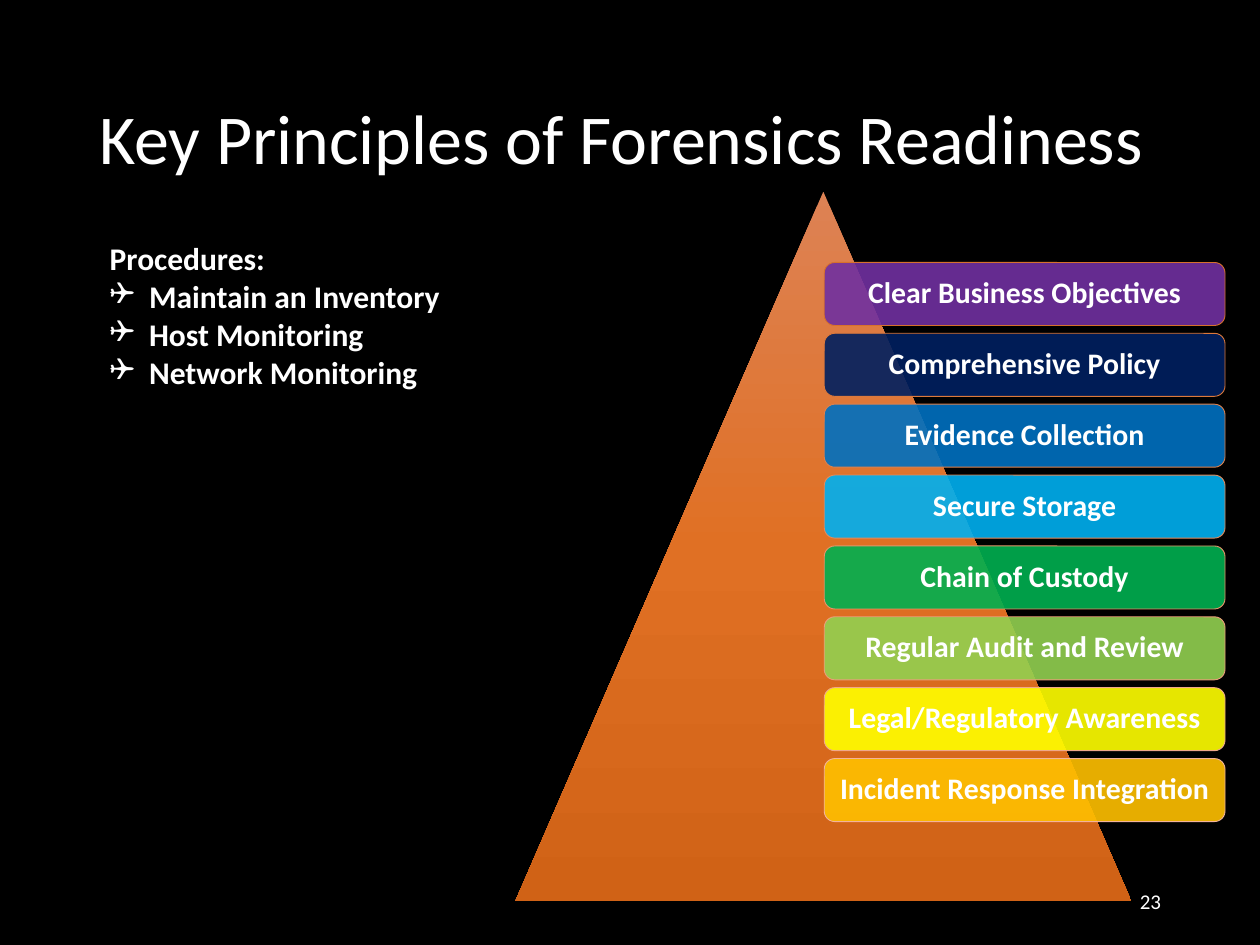
"""Build the slide on key principles of forensics readiness."""
from copy import deepcopy
from dataclasses import dataclass

from lxml import etree
from pptx import Presentation
from pptx import util as u
from pptx.dml.color import RGBColor
from pptx.enum import shapes, text
from pptx.oxml.ns import qn

COLOURS = {
    "black": "000000", "white": "FFFFFF",
    "peak": "DD8254", "middle": "E07024", "base": "D06216",
    "purple": "7030A0", "navy": "002060", "blue": "0070C0", "sky": "00B0F0",
    "green": "00B050", "lime": "92D050", "yellow": "FFFF00", "amber": "FFC000",
    "edge1": "D7712C", "edge2": "DC793B", "edge3": "E0814B", "edge4": "E58A5A",
    "edge5": "E9936A", "edge6": "EC9D7A", "edge7": "F0A88A", "edge8": "F3B39B",
}
FONT = "Calibri"
BAR_LEFT, BAR_TOP, BAR_PITCH = 471, 150, 40.5
BAR_WIDTH, BAR_HEIGHT = 229, 36


@dataclass(frozen=True)
class Principle:
    """A labelled bar with its fill and edge colour names."""
    label: str
    fill: str
    edge: str


PRINCIPLES = [
    Principle("Clear Business Objectives", "purple", "edge1"),
    Principle("Comprehensive Policy", "navy", "edge2"),
    Principle("Evidence Collection", "blue", "edge3"),
    Principle("Secure Storage", "sky", "edge4"),
    Principle("Chain of Custody", "green", "edge5"),
    Principle("Regular Audit and Review", "lime", "edge6"),
    Principle("Legal/Regulatory Awareness", "yellow", "edge7"),
    Principle("Incident Response Integration", "amber", "edge8"),
]
PROCEDURES = ["Maintain an Inventory", "Host Monitoring", "Network Monitoring"]


def colour(name: str) -> RGBColor:
    """Return the named colour."""
    return RGBColor.from_string(COLOURS[name])


def place(box, left: float, top: float, width: float, height: float) -> None:
    """Move and size a shape in points."""
    box.left, box.top = u.Pt(left), u.Pt(top)
    box.width, box.height = u.Pt(width), u.Pt(height)


def write(para, words: str, size: float, bold: bool = False) -> None:
    """Add one white run to a paragraph."""
    span = para.add_run()
    span.text = words
    span.font.name, span.font.size, span.font.bold = FONT, u.Pt(size), bold
    span.font.color.rgb = colour("white")


def set_bullet(para, mark: str = "", indent: float = 0) -> None:
    """Give a paragraph a hanging bullet, or none when the mark is empty."""
    properties = para._p.get_or_add_pPr()
    properties.set("marL", str(u.Pt(indent)))
    properties.set("indent", str(-u.Pt(indent)))
    if mark:
        etree.SubElement(properties, qn("a:buFont"), typeface="Wingdings")
        etree.SubElement(properties, qn("a:buChar"), char=mark)
    else:
        etree.SubElement(properties, qn("a:buNone"))


def draw_title(box) -> None:
    """Fill the title placeholder."""
    place(box, 49.5, 29, 621, 104)
    frame = box.text_frame
    frame.auto_size = text.MSO_AUTO_SIZE.NONE
    frame.vertical_anchor = text.MSO_ANCHOR.MIDDLE
    para = frame.paragraphs[0]
    para.alignment, para.line_spacing = text.PP_ALIGN.LEFT, 0.9
    write(para, "Key Principles of Forensics Readiness", 40)


def draw_procedures(box) -> None:
    """Fill the body placeholder with the heading and its list."""
    place(box, 55.5, 133.25, 250.5, 116.5)
    frame = box.text_frame
    frame.auto_size = text.MSO_AUTO_SIZE.NONE
    heading = frame.paragraphs[0]
    set_bullet(heading)
    write(heading, "Procedures:", 18, True)
    for procedure in PROCEDURES:
        para = frame.add_paragraph()
        set_bullet(para, "❑", 22.5)
        write(para, procedure, 18, True)
    for para in frame.paragraphs:
        para.space_before = u.Pt(0)


def draw_pyramid(group) -> None:
    """Draw the triangle with its vertical three-stop gradient."""
    pyramid = group.shapes.add_shape(
        shapes.MSO_SHAPE.ISOSCELES_TRIANGLE,
        u.Pt(294.5), u.Pt(109.5), u.Pt(352), u.Pt(405.5))
    pyramid.shadow.inherit = False
    pyramid.line.fill.background()
    pyramid.fill.gradient()
    pyramid.fill.gradient_angle = 270
    stop_list = pyramid._element.spPr.find(f".//{qn('a:gsLst')}")
    stop_list.append(deepcopy(stop_list[-1]))
    names = ("peak", "middle", "base")
    for index, (stop, name) in enumerate(zip(pyramid.fill.gradient_stops, names)):
        stop.position = index / 2
        stop.color.rgb = colour(name)


def draw_bar(group, principle: Principle, row: int) -> None:
    """Draw one translucent labelled bar."""
    bar = group.shapes.add_shape(
        shapes.MSO_SHAPE.ROUNDED_RECTANGLE, u.Pt(BAR_LEFT),
        u.Pt(BAR_TOP + row * BAR_PITCH), u.Pt(BAR_WIDTH), u.Pt(BAR_HEIGHT))
    bar.shadow.inherit = False
    bar.fill.solid()
    bar.fill.fore_color.rgb = colour(principle.fill)
    tint = bar._element.spPr.find(f"{qn('a:solidFill')}/{qn('a:srgbClr')}")
    etree.SubElement(tint, qn("a:alpha"), val="90000")
    bar.line.color.rgb = colour(principle.edge)
    bar.line.width = u.Pt(0.5)
    frame = bar.text_frame
    frame.word_wrap = True
    frame.vertical_anchor = text.MSO_ANCHOR.MIDDLE
    frame.margin_left = frame.margin_right = u.Pt(6)
    para = frame.paragraphs[0]
    para.alignment, para.line_spacing = text.PP_ALIGN.CENTER, 0.9
    write(para, principle.label, 17, True)


def draw_page_number(page) -> None:
    """Add the page number at the lower right."""
    box = page.shapes.add_textbox(u.Pt(508.5), u.Pt(500.5), u.Pt(162), u.Pt(28.75))
    frame = box.text_frame
    frame.word_wrap = True
    frame.vertical_anchor = text.MSO_ANCHOR.MIDDLE
    para = frame.paragraphs[0]
    para.alignment = text.PP_ALIGN.RIGHT
    write(para, "23", 12)


def main() -> None:
    """Build and save the deck."""
    deck = Presentation()
    deck.slide_width, deck.slide_height = u.Pt(720), u.Pt(540)
    page = deck.slides.add_slide(deck.slide_layouts[1])
    page.background.fill.solid()
    page.background.fill.fore_color.rgb = colour("black")
    draw_title(page.shapes.title)
    draw_procedures(page.placeholders[1])
    group = page.shapes.add_group_shape()
    draw_pyramid(group)
    for row, principle in enumerate(PRINCIPLES):
        draw_bar(group, principle, row)
    draw_page_number(page)
    deck.save("out.pptx")


if __name__ == "__main__":
    main()
